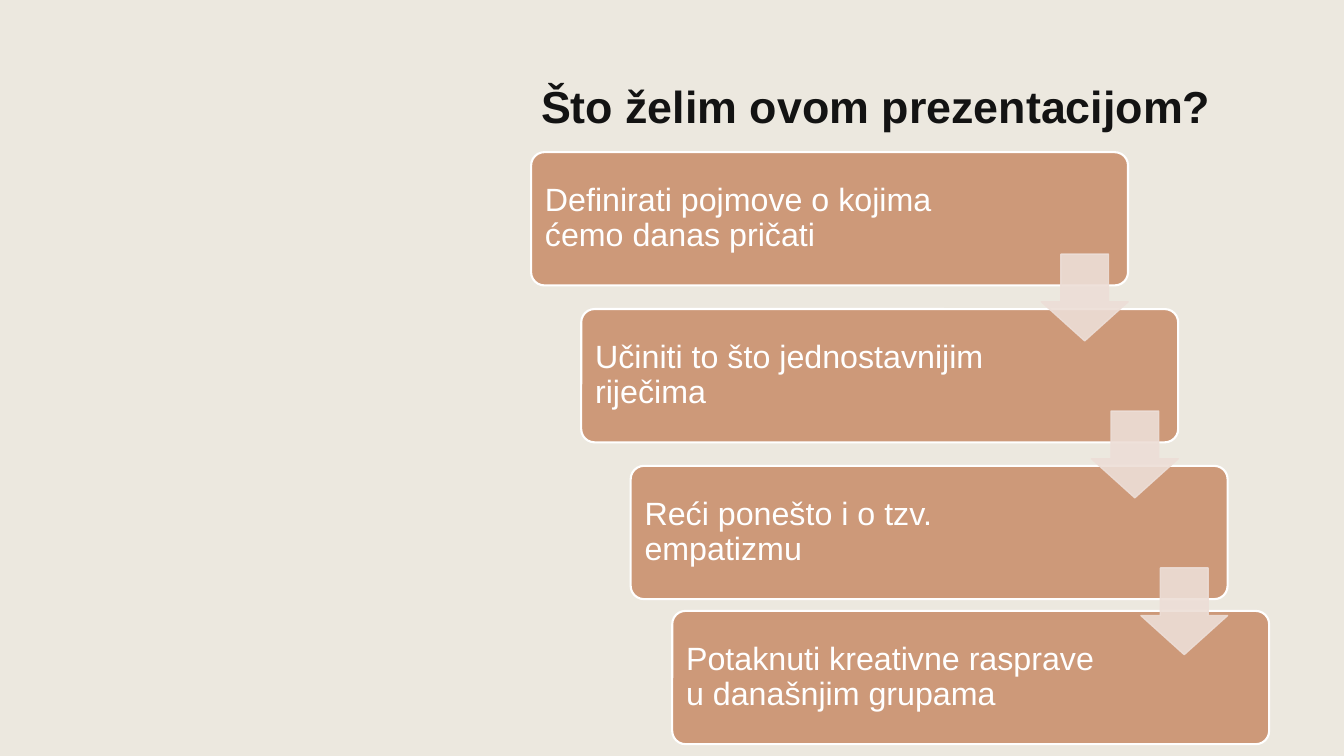
import pptx
import pptx.util
import pptx.dml.color
import pptx.enum.shapes
import pptx.enum.text
import pptx.oxml.ns
import lxml.etree

Pt = pptx.util.Pt
RGBColor = pptx.dml.color.RGBColor
MSO_SHAPE = pptx.enum.shapes.MSO_SHAPE
MSO_ANCHOR = pptx.enum.text.MSO_ANCHOR
PP_ALIGN = pptx.enum.text.PP_ALIGN

BACKGROUND = RGBColor(0xEC, 0xE8, 0xDF)
TITLE_INK = RGBColor(0x13, 0x13, 0x13)
STEP_FILL = RGBColor(0xCD, 0x99, 0x79)
ARROW_FILL = RGBColor(0xED, 0xDE, 0xD7)
WHITE = RGBColor(0xFF, 0xFF, 0xFF)
FONT = "Arial"

TITLE = "Što želim ovom prezentacijom?"
# Left, top and text width of each step
STEPS = [
    ("Definirati pojmove o kojima ćemo danas pričati", 379.4, 108.7, 316),
    ("Učiniti to što jednostavnijim riječima", 415.2, 220.8, 323),
    ("Reći ponešto i o tzv. empatizmu", 450.5, 332.8, 323),
    ("Potaknuti kreativne rasprave u današnjim grupama", 480.2, 436.4, 323),
]
STEP_W, STEP_H = 426.4, 95.2
TEXT_INSET = 2.8
ARROW_SIZE = 62
ARROW_DROP = 72.8


def add_text(shapes, text, left, top, width, height, size, color,
             anchor=MSO_ANCHOR.MIDDLE, bold=False):
    sp = shapes.add_textbox(Pt(left), Pt(top), Pt(width), Pt(height))
    tf = sp.text_frame
    tf.word_wrap = True
    tf.vertical_anchor = anchor
    tf.margin_left = tf.margin_right = Pt(7.2)
    tf.margin_top = tf.margin_bottom = Pt(7.2 if not bold else 3.6)
    tf.text = text
    p = tf.paragraphs[0]
    p.alignment = PP_ALIGN.LEFT
    p.line_spacing = 0.9
    font = p.runs[0].font
    font.name, font.size, font.bold = FONT, Pt(size), bold
    font.color.rgb = color


def add_block(shapes, kind, left, top, width, height, adjustments,
              fill, line, line_width):
    sp = shapes.add_shape(kind, Pt(left), Pt(top), Pt(width), Pt(height))
    sp.shadow.inherit = False
    for i, value in enumerate(adjustments):
        sp.adjustments[i] = value
    sp.fill.solid()
    sp.fill.fore_color.rgb = fill
    sp.line.color.rgb = line
    sp.line.width = Pt(line_width)
    return sp


def set_opacity(sp, percent):
    qn = pptx.oxml.ns.qn
    for color in sp.element.spPr.iter(qn("a:srgbClr")):
        alpha = lxml.etree.SubElement(color, qn("a:alpha"))
        alpha.set("val", str(percent * 1000))


def add_step(shapes, text, left, top, text_width):
    add_block(shapes, MSO_SHAPE.ROUNDED_RECTANGLE, left, top, STEP_W, STEP_H,
              [0.1], STEP_FILL, WHITE, 1.5)
    add_text(shapes, text, left + TEXT_INSET, top + TEXT_INSET, text_width,
             STEP_H - 2 * TEXT_INSET, 23, WHITE)


def add_arrow(shapes, step_left, step_top):
    # Right edge lines up with the step the arrow leaves
    sp = add_block(shapes, MSO_SHAPE.DOWN_ARROW,
                   step_left + STEP_W - ARROW_SIZE, step_top + ARROW_DROP,
                   ARROW_SIZE, ARROW_SIZE, [0.55, 0.45],
                   ARROW_FILL, ARROW_FILL, 1)
    set_opacity(sp, 90)


def main():
    prs = pptx.Presentation()
    prs.slide_width, prs.slide_height = Pt(960), Pt(540)
    s = prs.slides.add_slide(prs.slide_layouts[6])
    s.background.fill.solid()
    s.background.fill.fore_color.rgb = BACKGROUND

    # Title
    add_text(s.shapes, TITLE, 379.4, 25.2, 532.8, 73.4, 32, TITLE_INK,
             MSO_ANCHOR.BOTTOM, True)

    # Staircase of steps, with arrows on top
    staircase = s.shapes.add_group_shape().shapes
    for text, left, top, text_width in STEPS:
        add_step(staircase, text, left, top, text_width)
    for _, left, top, _ in STEPS[:-1]:
        add_arrow(staircase, left, top)

    prs.save("out.pptx")


if __name__ == "__main__":
    main()
